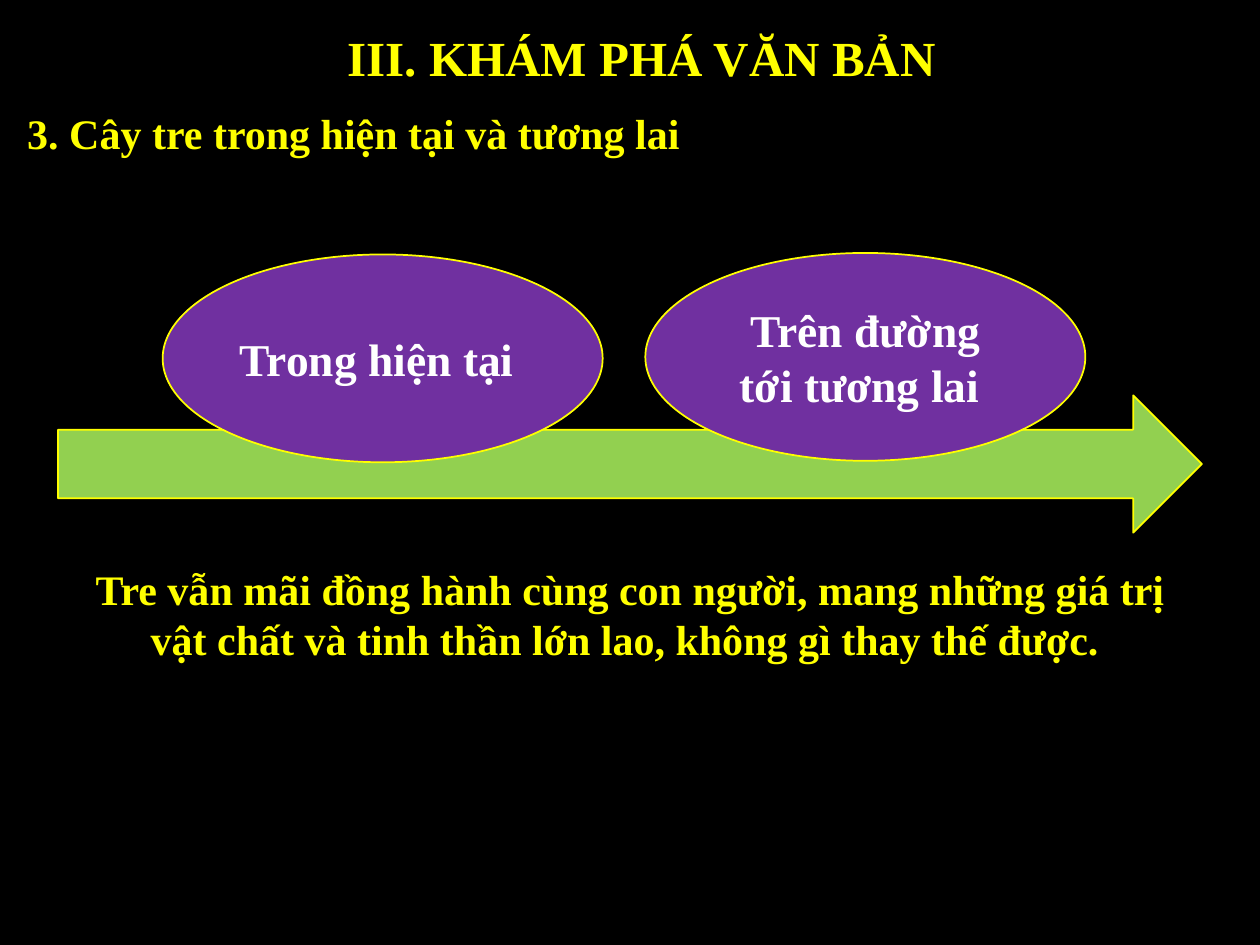
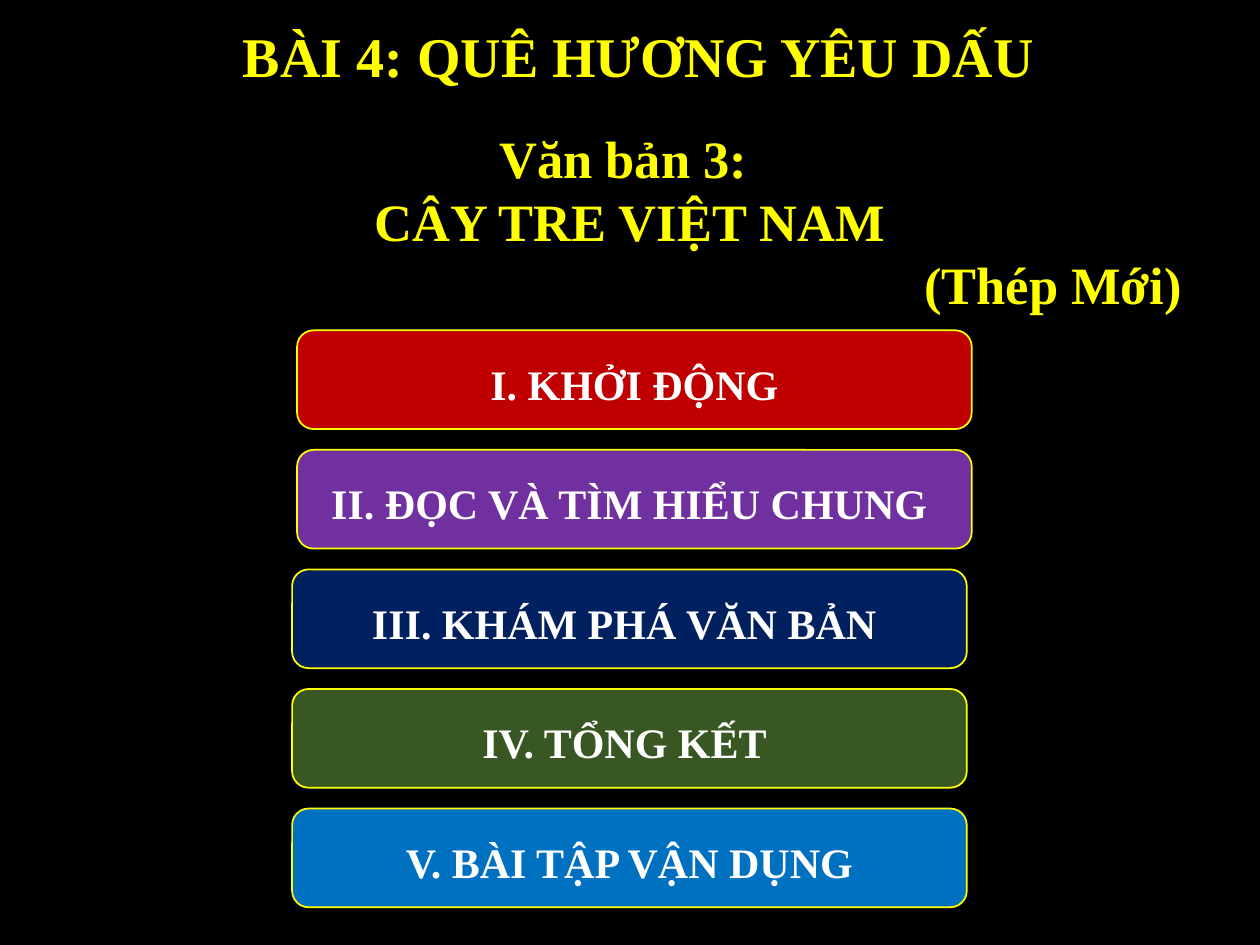
from pptx import Presentation
from pptx.dml.color import RGBColor
from pptx.enum.shapes import MSO_SHAPE as Form
from pptx.enum.text import MSO_ANCHOR as Anchor, PP_ALIGN as Align
from pptx.util import Cm, Pt

BLACK, WHITE, YELLOW = "000000", "FFFFFF", "FFFF00"
PURPLE, LIME = "7030A0", "92D050"
FONT = {"name": "Times New Roman", "bold": True}


def paint(target, color):
    """Give a fill or a font a solid colour."""
    if hasattr(target, "solid"):
        target.solid()
        target = target.fore_color
    else:
        target = target.color
    target.rgb = RGBColor.from_string(color)


def write(frame, lines, size, color, align=Align.CENTER, space=1.0):
    for i, line in enumerate(lines):
        para = frame.paragraphs[0] if i == 0 else frame.add_paragraph()
        form = {"alignment": align, "line_spacing": space}
        for key, value in form.items():
            setattr(para, key, value)
        run = para.add_run()
        run.text = line
        for key, value in {**FONT, "size": Pt(size)}.items():
            setattr(run.font, key, value)
        paint(run.font, color)


def add_slide(deck):
    slide = deck.slides.add_slide(deck.slide_layouts[6])
    paint(slide.background.fill, BLACK)
    return slide


def add_text(slide, box, lines, size, wrap=True, **form):
    frame = slide.shapes.add_textbox(*map(Cm, box)).text_frame
    frame.word_wrap = wrap
    write(frame, lines, size, YELLOW, **form)
    return frame


def add_form(slide, kind, box, fill, text="", size=24, space=1.0):
    """Add a filled shape with a thin yellow outline and white text."""
    shape = slide.shapes.add_shape(kind, *map(Cm, box))
    shape.shadow.inherit = False
    paint(shape.fill, fill)
    paint(shape.line.fill, YELLOW)
    shape.line.width = Pt(1)
    if text:
        shape.text_frame.vertical_anchor = Anchor.MIDDLE
        write(shape.text_frame, [text], size, WHITE, space=space)


def build_theme(deck):
    slide = add_slide(deck)
    add_text(slide, (6.76, 0.43, 12.5, 1.45), ["III. KHÁM PHÁ VĂN BẢN"], 28,
             wrap=False, align=Align.LEFT)
    add_text(slide, (0.3, 1.9, 14.86, 1.37),
             ["3. Cây tre trong hiện tại và tương lai"], 24,
             align=Align.LEFT, space=1.15)
    add_text(slide, (1.17, 11.23, 23.06, 2.31),
             ["Tre vẫn mãi đồng hành cùng con người, mang những giá trị "
              "vật chất và tinh thần lớn lao, không gì thay thế được. "], 24)
    add_form(slide, Form.RIGHT_ARROW, (1.17, 7.97, 23.06, 2.77), LIME)
    stages = [(3.28, 5.13, "Trong hiện tại "),
              (13.01, 5.1, "Trên đường tới tương lai ")]
    for left, top, text in stages:
        add_form(slide, Form.OVAL, (left, top, 8.87, 4.19), PURPLE, text, 26)


def build_menu(deck):
    slide = add_slide(deck)
    parts = [
        (5.99, "C00000", "I. KHỞI ĐỘNG"),
        (5.99, PURPLE, "II. ĐỌC VÀ TÌM HIỂU CHUNG "),
        (5.89, "002060", "III. KHÁM PHÁ VĂN BẢN "),
        (5.89, "385723", "IV. TỔNG KẾT "),
        (5.89, "0070C0", "V. BÀI TẬP VẬN DỤNG"),
    ]
    for i, (left, fill, text) in enumerate(parts):
        box = left, 6.66 + 2.41 * i, 13.6, 1.99
        add_form(slide, Form.ROUNDED_RECTANGLE, box, fill, text, space=1.15)
    add_text(slide, (4.57, 0.3, 16.61, 1.62), ["BÀI 4: QUÊ HƯƠNG YÊU DẤU"], 32,
             wrap=False)
    frame = add_text(slide, (0.18, 2.41, 25.04, 4.11),
                     ["Văn bản 3: ", "CÂY TRE VIỆT NAM", "(Thép Mới)"], 30)
    author = frame.paragraphs[-1]
    author._p.get_or_add_pPr().set("marL", str(Cm(17.07)))


def main():
    deck = Presentation()
    deck.slide_width, deck.slide_height = Cm(25.4), Cm(19.05)
    build_theme(deck)
    build_menu(deck)
    deck.save("out.pptx")


if __name__ == "__main__":
    main()
